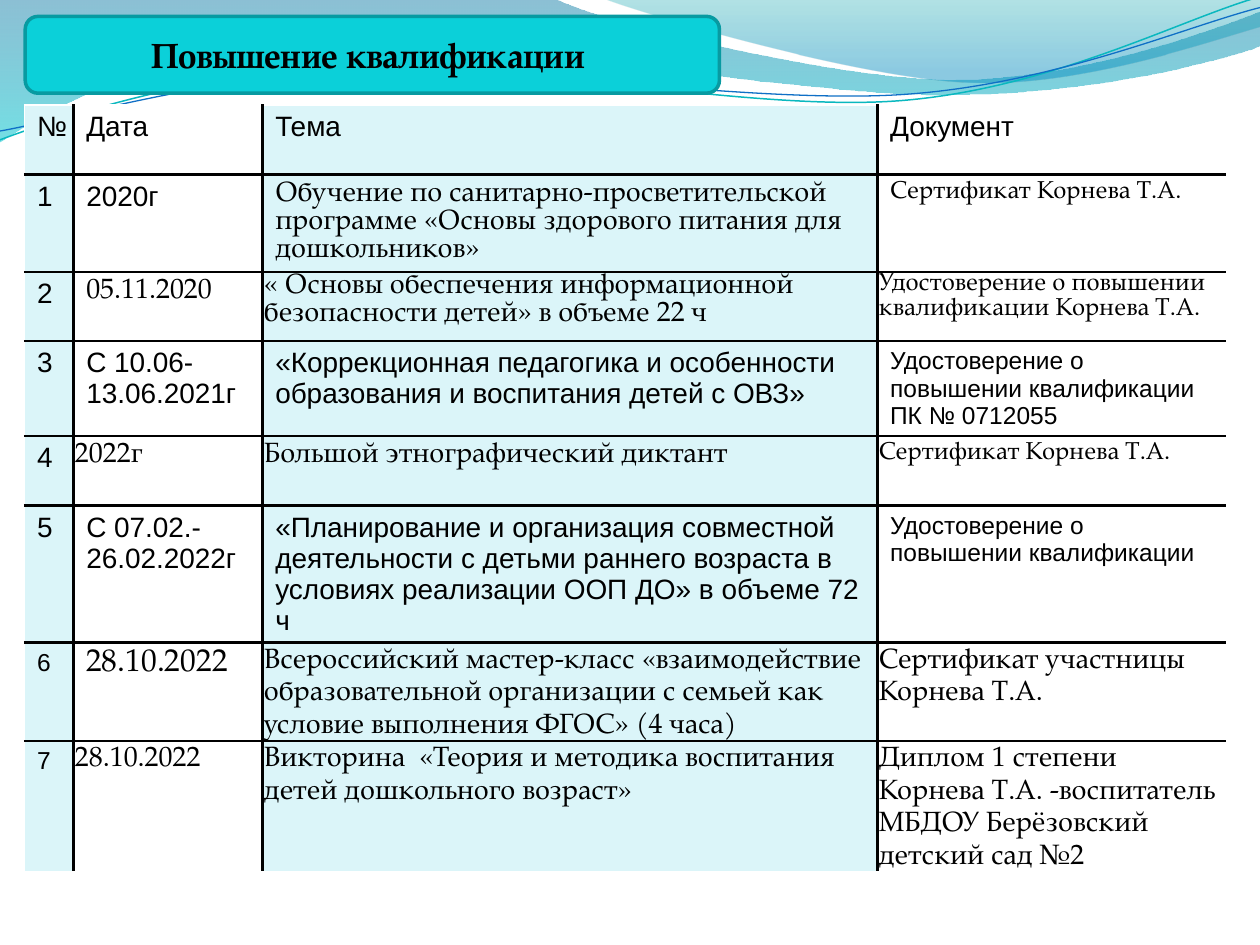
from math import cos, radians, sin

from lxml.etree import SubElement
from pptx import Presentation
from pptx.dml.color import RGBColor as Rgb
from pptx.enum.shapes import MSO_SHAPE as Preset
from pptx.enum.text import MSO_ANCHOR as Anchor, PP_ALIGN as Align
from pptx.oxml.ns import qn
from pptx.util import Inches, Pt

COLORS = {
    "black": "000000", "white": "FFFFFF", "tint": "DBF5F9",
    "title": "0BD0D9", "title edge": "089AA1",
    "deep": "0074A1", "aqua": "00C6CF", "teal": "00A1A9", "blue": "008BBF",
    "teal line": "0AB8BF", "blue line": "0F6FC6",
}
SERIF = "TeX Gyre Pagella"

PLAIN = {}
SMALL = {"size": 14}
BOOK = {"font": SERIF}
TIGHT = BOOK | {"inset": 0.1}
FLOW = TIGHT | {"spacing": 1.15}
JUSTIFIED = FLOW | {"align": Align.JUSTIFY}

COLUMN_WIDTHS = (3.9, 15, 48.8, 27.6)
COLUMN_FILLS = ("tint", "white", "tint", "white")
COLUMN_RULES = (("white", 1), ("black", 2.25), ("black", 2.25), ("black", 1.5), ("white", 1))

COURSES = [
    [("№", PLAIN), ("Дата", PLAIN), ("Тема", PLAIN), ("Документ", PLAIN)],
    [("1", PLAIN), ("2020г", PLAIN),
     ("Обучение по санитарно-просветительской  программе «Основы здорового питания для дошкольников»", BOOK),
     ("Сертификат Корнева Т.А.", BOOK | SMALL)],
    [("2", PLAIN), ("05.11.2020", BOOK),
     ("« Основы обеспечения информационной безопасности детей» в объеме 22 ч", TIGHT),
     ("Удостоверение о повышении квалификации Корнева Т.А.", TIGHT | SMALL)],
    [("3", PLAIN), ("С 10.06-13.06.2021г", PLAIN),
     ("«Коррекционная педагогика и особенности образования и воспитания детей с ОВЗ»", PLAIN),
     ("Удостоверение о повышении квалификации  ПК № 0712055", SMALL)],
    [("4", PLAIN), ("2022г", JUSTIFIED), ("Большой этнографический диктант", FLOW),
     ("Сертификат Корнева Т.А.", JUSTIFIED | SMALL)],
    [("5", PLAIN), ("С 07.02.-26.02.2022г", PLAIN),
     ("«Планирование и организация совместной деятельности с детьми раннего возраста "
      "в условиях реализации ООП ДО» в объеме 72 ч", PLAIN),
     ("Удостоверение о повышении квалификации", SMALL)],
    [("6", SMALL), ("28.10.2022", BOOK | {"size": 18}),
     ("Всероссийский мастер-класс «взаимодействие образовательной организации с семьей "
      "как условие выполнения ФГОС» (4 часа)", FLOW),
     ("Сертификат участницы Корнева Т.А.", FLOW)],
    [("7", SMALL), ("28.10.2022", JUSTIFIED),
     ("Викторина  «Теория и методика воспитания детей дошкольного возраст»", FLOW),
     ("Диплом 1 степени Корнева Т.А. -воспитатель МБДОУ Берёзовский детский сад №2", FLOW)],
]

LEFT_WAVE = [
    [(0, -0.1)],
    [(44, -0.1)],
    [(47.6, 1.7), (66.4, 6.3), (75.8, 6.3)],
    [(85.3, 6.3), (95.8, 2.6), (100, 0.9)],
    [(100.1, 3.6)],
    [(98.3, 4.4), (87, 7.6), (74.6, 7.5)],
    [(62.2, 7.5), (38.2, 2.8), (25.7, 3.4)],
    [(12.9, 3.5), (4.6, 8.3), (-0.1, 11.3)],
]
RIGHT_WAVE = [
    [(47.9, -0.1)],
    [(50.9, 1.1), (68.2, 6.2), (76.9, 6.5)],
    [(85.6, 6.9), (96.1, 3.2), (100, 2.1)],
    [(100, 0)],
]
TEAL_LINE = [
    [(0, 11.1)],
    [(4.8, 9.3), (15.8, 5.7), (27.7, 5.2)],
    [(39.5, 4.7), (59.3, 8.9), (71.3, 8)],
    [(83.3, 7.1), (93.8, 1.5), (99.8, -0.2)],
]
BLUE_LINE = [
    [(0, 10.4)],
    [(4.7, 9.6), (16.4, 6.1), (28.3, 5.6)],
    [(40.3, 5.1), (59.7, 8.3), (71.7, 7.5)],
    [(83.6, 6.7), (94.1, 2.1), (100, 0.6)],
]


def color(name):
    return Rgb.from_string(COLORS[name])


def write(frame, text, font="Arial", size=16, bold=False, align=None, spacing=None):
    paragraph = frame.paragraphs[0]
    paragraph.alignment = align
    paragraph.line_spacing = spacing
    run = paragraph.add_run()
    run.text = text
    run.font.name, run.font.size, run.font.bold = font, Pt(size), bold
    run.font.color.rgb = color("black")


def turn(point, center, degrees):
    dx, dy = point[0] - center[0], point[1] - center[1]
    c, s = cos(radians(degrees)), sin(radians(degrees))
    return center[0] + dx * c - dy * s, center[1] + dx * s + dy * c


class Deck:
    """Holds the style and the current slide, measured on a grid of 100 columns by 75 rows."""

    def __init__(self):
        self.presentation = Presentation()
        self.presentation.slide_width, self.presentation.slide_height = Inches(10), Inches(7.5)
        self.unit = self.presentation.slide_width / 100
        self.slide = self.presentation.slides.add_slide(self.presentation.slide_layouts[6])

    def length(self, cells):
        return round(cells * self.unit)

    def outline(self, segments, closed):
        points = [tuple(map(self.length, point)) for segment in segments for point in segment]
        builder = self.slide.shapes.build_freeform(*points[0])
        builder.add_line_segments(points[1:], close=closed)
        shape = builder.convert_to_shape()
        shape.shadow.inherit = False
        corners = iter(list(shape._element.iter(qn("a:lnTo"))))
        for segment in segments[1:]:
            first, *others = [next(corners) for _ in segment]
            if others:
                bezier = first.getparent().makeelement(qn("a:cubicBezTo"))
                first.addprevious(bezier)
                for corner in (first, *others):
                    bezier.append(corner[0])
                    corner.getparent().remove(corner)
        return shape

    def wave(self, segments, stops):
        shape = self.outline(segments, True)
        shape.line.fill.background()
        shape.fill.gradient()
        shape.fill.gradient_angle = 270
        for stop, (position, name, _) in zip(shape.fill.gradient_stops, stops):
            stop.position = position
            stop.color.rgb = color(name)
        fills = shape._element.spPr.iter(qn("a:srgbClr"))
        for fill, (_, _, opacity) in zip(fills, stops):
            SubElement(fill, qn("a:alpha"), val=str(opacity * 1000))

    def curve(self, segments, center, name, width, tilt=2.7):
        level = [[turn(point, center, tilt) for point in segment] for segment in segments]
        shape = self.outline(level, False)
        shape.rotation = 360 - tilt
        shape.fill.background()
        shape.line.color.rgb, shape.line.width = color(name), Pt(width)

    def banner(self, text, *area):
        shape = self.slide.shapes.add_shape(Preset.ROUNDED_RECTANGLE, *map(self.length, area))
        shape.shadow.inherit = False
        shape.fill.solid()
        shape.fill.fore_color.rgb = color("title")
        shape.line.color.rgb, shape.line.width = color("title edge"), Pt(2)
        frame = shape.text_frame
        frame.word_wrap, frame.vertical_anchor = True, Anchor.MIDDLE
        write(frame, text, font=SERIF, size=20, bold=True, align=Align.CENTER)

    def border(self, cell, side, name, width):
        line = SubElement(cell._tc.get_or_add_tcPr(), qn(f"a:ln{side}"), w=str(Pt(width)))
        fill = SubElement(line, qn("a:solidFill"))
        SubElement(fill, qn("a:srgbClr"), val=COLORS[name])

    def cell(self, cell, text, fill, rules, inset=None, **style):
        if inset is not None:
            cell.margin_left = cell.margin_right = cell.margin_top = self.length(inset)
            cell.margin_bottom = 0
        for side, rule in zip("LRTB", rules):
            self.border(cell, side, *rule)
        cell.fill.solid()
        cell.fill.fore_color.rgb = color(fill)
        write(cell.text_frame, text, **style)

    def table(self, rows, left, top, row_height):
        area = (left, top, sum(COLUMN_WIDTHS), row_height * len(rows))
        shape = self.slide.shapes.add_table(len(rows), len(COLUMN_WIDTHS), *map(self.length, area))
        table = shape.table
        table.first_row = table.horz_banding = False
        for column, width in zip(table.columns, COLUMN_WIDTHS):
            column.width = self.length(width)
        row_rules = [("white", 1), *[("black", 1.5)] * (len(rows) - 1), ("white", 1)]
        for r, row in enumerate(rows):
            for c, (text, style) in enumerate(row):
                rules = COLUMN_RULES[c:c + 2] + tuple(row_rules[r:r + 2])
                self.cell(table.cell(r, c), text, COLUMN_FILLS[c], rules, **style)


def main():
    deck = Deck()
    deck.wave(LEFT_WAVE, [(0, "deep", 45), (1, "aqua", 55)])
    deck.wave(RIGHT_WAVE, [(0, "teal", 30), (0.8, "blue", 45)])
    deck.curve(TEAL_LINE, (49.9, 5.75), "teal line", 0.85)
    deck.curve(BLUE_LINE, (49.95, 5.9), "blue line", 0.75)
    deck.banner("Повышение квалификации ", 2, 1.3, 55.1, 6.1)
    deck.table(COURSES, 1.95, 8.35, 5.5)
    deck.presentation.save("out.pptx")


if __name__ == "__main__":
    main()
